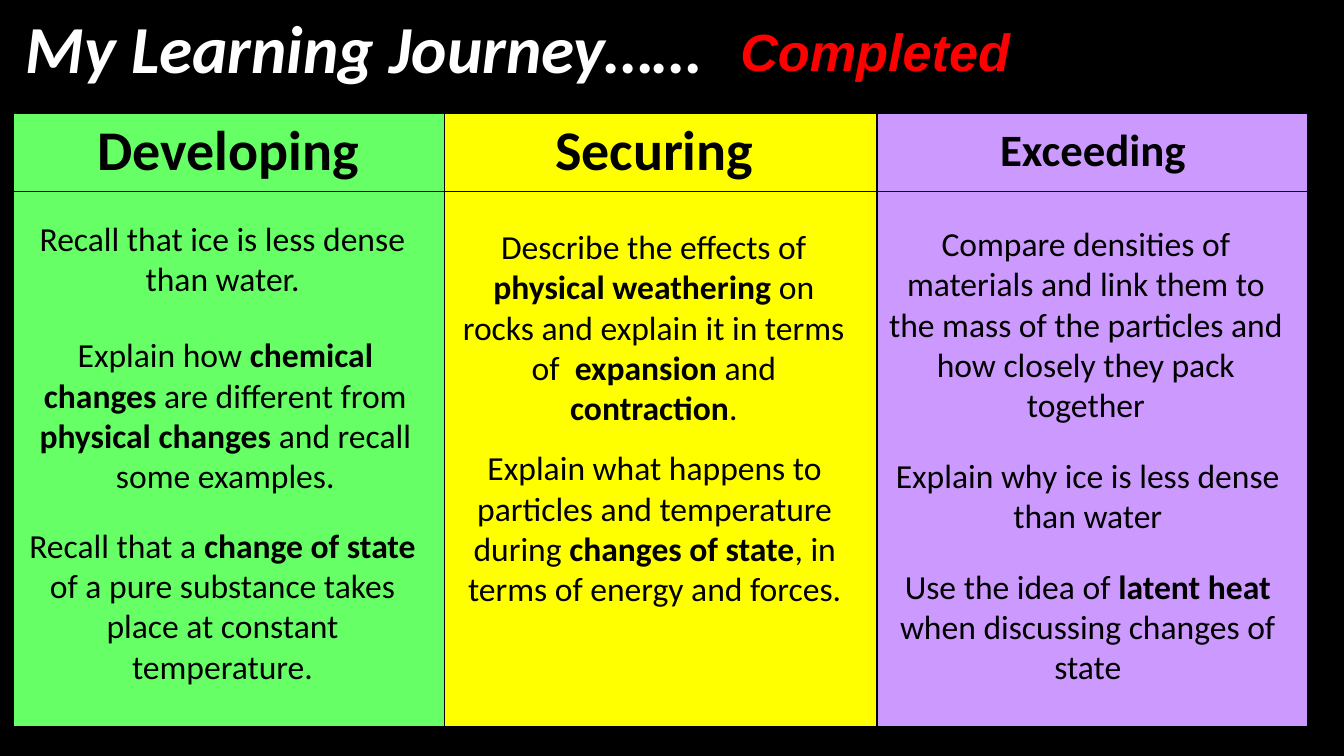
"""Build the three-level learning journey slide."""
from lxml.etree import SubElement
from pptx import Presentation
from pptx.dml.color import RGBColor
from pptx.enum.text import MSO_ANCHOR as Anchor, MSO_AUTO_SIZE as AutoSize, PP_ALIGN as Align
from pptx.oxml.ns import qn
from pptx.util import Pt

BLACK, WHITE, RED = "000000", "FFFFFF", "FF0000"
LEVELS = [("Developing", 30, "66FF66"), ("Securing ", 30, "FFFF00"), ("Exceeding", 24, "CC99FF")]
GOALS = [
    (6.5, 113, 51, ["Recall that ice is less dense than water."]),
    (8, 175.5, 94.5, ["Explain how ", "chemical changes ", "are different from ",
                      "physical changes", " and recall some examples."]),
    (6.5, 277.5, 94.5, ["Recall that a ", "change of state ",
                        "of a pure substance takes place at constant temperature."]),
    (237.5, 117.5, 116.5, ["Describe the effects of ", "physical weathering ",
                           "on rocks and explain it in terms of  ", "expansion", " and ",
                           "contraction", "."]),
    (238, 236, 94.5, ["Explain what happens to particles and temperature during ",
                      "changes of state", ", in terms of energy and forces."]),
    (469, 116, 116.5, ["Compare densities of materials and link them to the mass of the "
                       "particles and how closely they pack together"]),
    (470, 240, 51, ["Explain why ice is less dense than water"]),
    (470, 299.5, 72.5, ["Use the idea of ", "latent heat ", "when discussing changes of state"]),
]
GOAL_WIDTH = 225.5
TABLE_LEFT, TABLE_TOP, COLUMN_WIDTH = 6.5, 60, 231.6
ROW_HEIGHTS = [42.3, 287.5]
OUTER, INNER = 2.25, 1


def color(value):
    return RGBColor.from_string(value)


def write(frame, spans, size=18, font="Calibri", ink=BLACK, bold=False, italic=False,
          align=Align.CENTER, anchor=Anchor.TOP):
    """Write spans as one paragraph, every second span having the opposite weight."""
    frame.word_wrap = True
    frame.vertical_anchor = anchor
    para = frame.paragraphs[0]
    para.alignment = align
    for index, text in enumerate(spans):
        span = para.add_run()
        span.text = text
        span.font.name, span.font.size = font, Pt(size)
        span.font.bold, span.font.italic = bold != (index % 2 == 1), italic
        span.font.color.rgb = color(ink)


def add_text(page, left, top, width, height, spans, **style):
    box = page.shapes.add_textbox(Pt(left), Pt(top), Pt(width), Pt(height))
    write(box.text_frame, spans, **style)


def add_borders(cell, widths):
    properties = cell._tc.get_or_add_tcPr()
    for side, width in widths.items():
        line = SubElement(properties, qn(f"a:ln{side}"), w=str(Pt(width)))
        fill = SubElement(line, qn("a:solidFill"))
        SubElement(fill, qn("a:srgbClr"), val=BLACK)


def add_levels(page):
    columns, rows = len(LEVELS), len(ROW_HEIGHTS)
    table = page.shapes.add_table(rows, columns, Pt(TABLE_LEFT), Pt(TABLE_TOP),
                                  Pt(COLUMN_WIDTH * columns), Pt(sum(ROW_HEIGHTS))).table
    for row, height in enumerate(ROW_HEIGHTS):
        table.rows[row].height = Pt(height)
        for column, (name, size, shade) in enumerate(LEVELS):
            table.columns[column].width = Pt(COLUMN_WIDTH)
            cell = table.cell(row, column)
            add_borders(cell, {"L": INNER if column else OUTER,
                               "R": INNER if column < columns - 1 else OUTER,
                               "T": INNER if row else OUTER,
                               "B": INNER if row < rows - 1 else OUTER})
            cell.fill.solid()
            cell.fill.fore_color.rgb = color(shade)
            if row == 0:
                cell.margin_left = cell.margin_right = Pt(5)
                cell.margin_top = cell.margin_bottom = Pt(3)
                cell.vertical_anchor = Anchor.MIDDLE
                write(cell.text_frame, [name], size=size, bold=True, anchor=Anchor.MIDDLE)


def main():
    deck = Presentation()
    deck.slide_width, deck.slide_height = Pt(720), Pt(405)
    page = deck.slides.add_slide(deck.slide_layouts[5])
    page.background.fill.solid()
    page.background.fill.fore_color.rgb = color(BLACK)

    title = page.shapes.title
    title.left, title.top, title.width, title.height = Pt(6.5), Pt(0), Pt(517), Pt(101.5)
    title.text_frame.auto_size = AutoSize.NONE
    write(title.text_frame, ["My Learning Journey……"], size=36, ink=WHITE,
          bold=True, italic=True, align=Align.LEFT)

    add_levels(page)
    add_text(page, 389.5, 7, 196.5, 41, ["Completed"], size=28, font="Arial", ink=RED,
             bold=True, italic=True, align=Align.LEFT)
    for left, top, height, spans in GOALS:
        add_text(page, left, top, GOAL_WIDTH, height, spans)
    deck.save("out.pptx")


if __name__ == "__main__":
    main()
